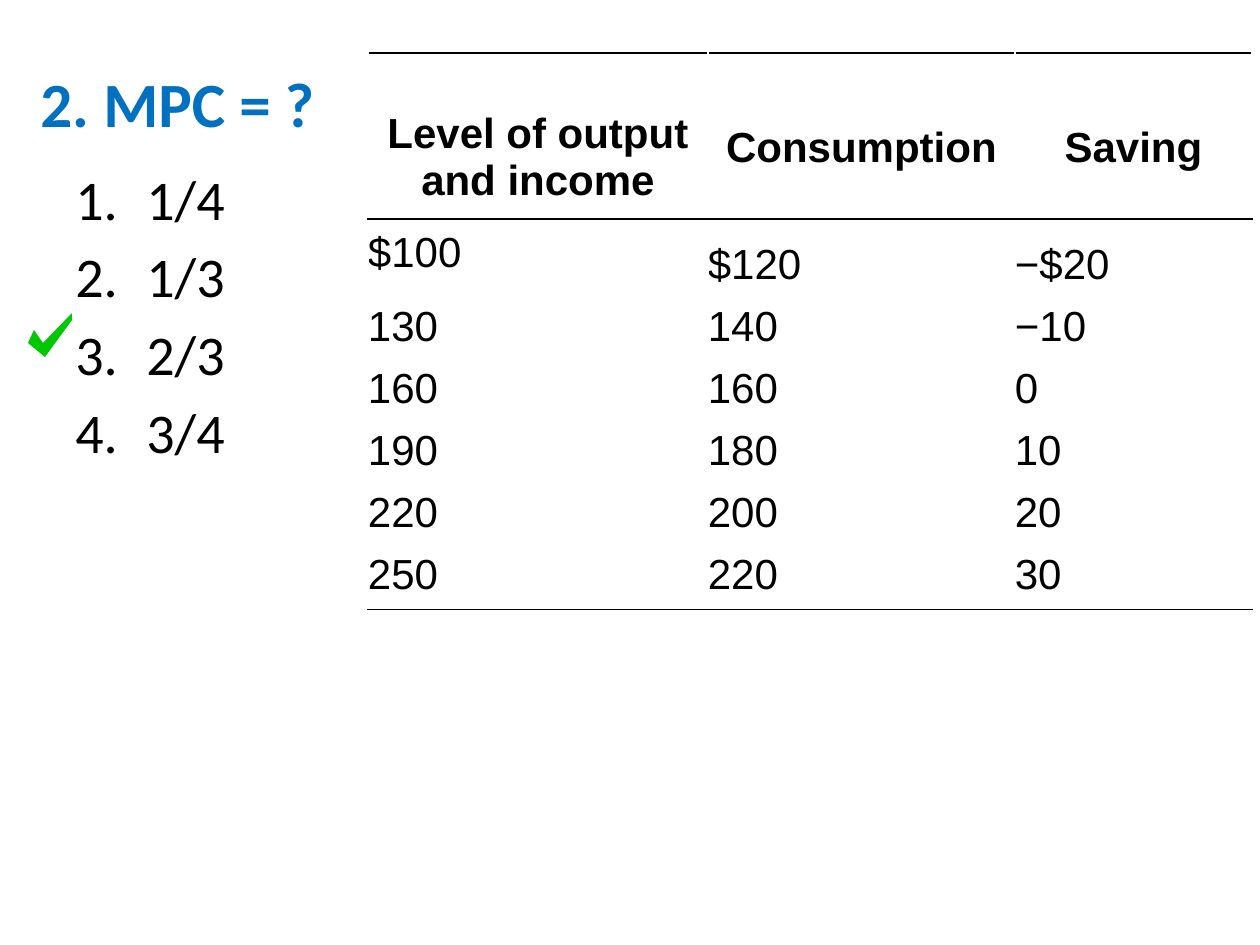
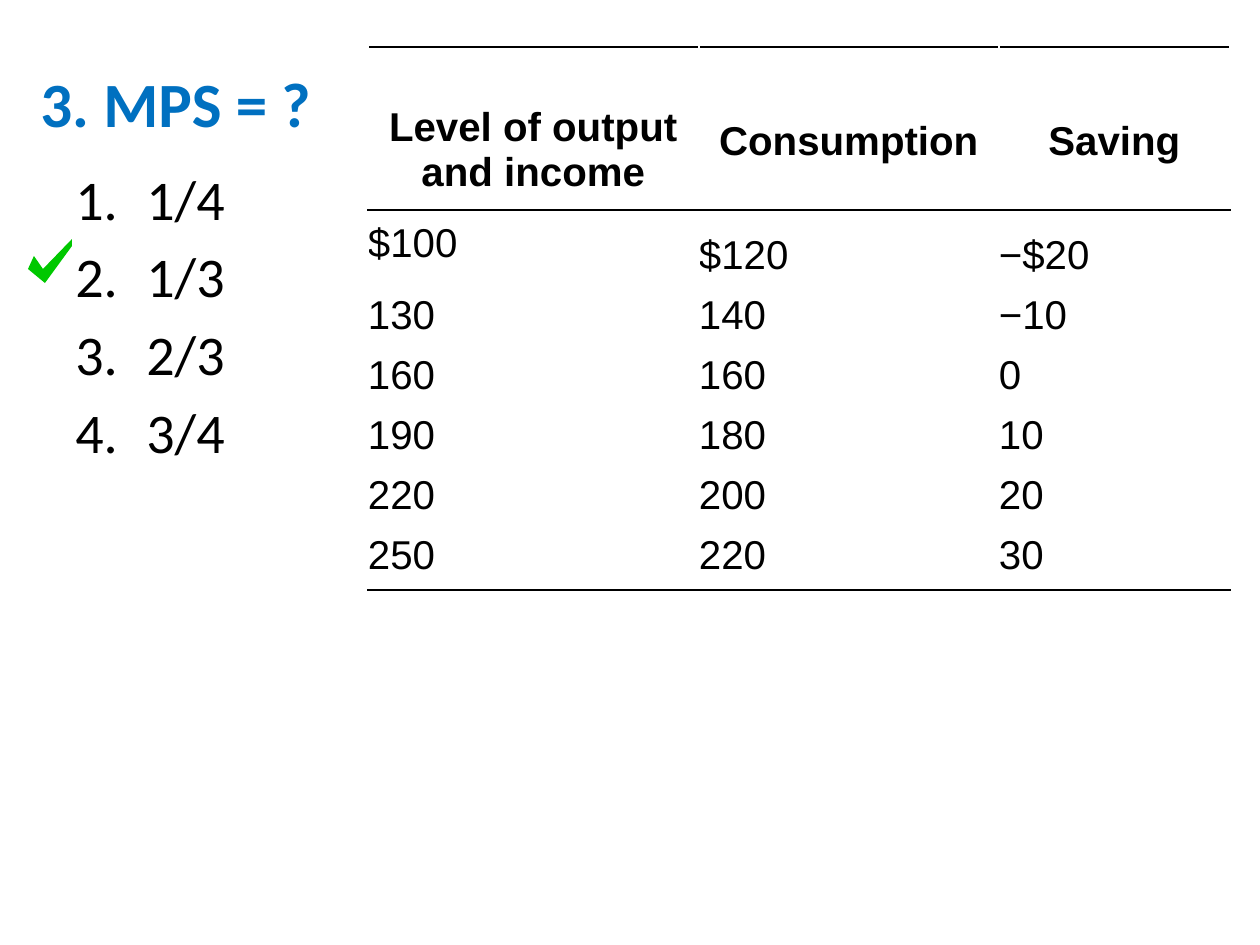
from dataclasses import dataclass

import pptx
import pptx.dml.color
import pptx.enum.text
import pptx.oxml
import pptx.oxml.ns
import pptx.util

EMU_PER_PX = 914400 / 126
COLORS = {"title": "0070C0", "text": "000000", "rule": "000000", "tick": "00C800"}
ALIGN = pptx.enum.text.PP_ALIGN
ANCHOR = pptx.enum.text.MSO_ANCHOR

# Text formats shared by both slides
TITLE = {"name": "Calibri", "size": pptx.util.Pt(36), "bold": True}
BODY = {"name": "Calibri", "size": pptx.util.Pt(32), "bold": False}

ANSWERS = ["1/4", "1/3", "2/3", "3/4"]
INCOME_ROWS = [
    ["Level of output and income", "Consumption", "Saving"],
    ["$100", "$120", "−$20"],
    ["130", "140", "−10"],
    ["160", "160", "0"],
    ["190", "180", "10"],
    ["220", "200", "20"],
    ["250", "220", "30"],
]
TICK_LEFT = 28
TICK_POINTS = [(6, 17), (0, 30), (17, 44), (44, 7), (44, 0), (15, 30)]


@dataclass
class Box:
    left: int
    top: int
    width: int
    height: int


@dataclass
class IncomeTable:
    left: int
    top: int
    cols: list[int]
    rows: list[int]
    size: int


@dataclass
class Question:
    title: str
    title_width: int
    tick_top: int
    table: IncomeTable


QUESTIONS = [
    Question("2. MPC = ?", 325, 313, IncomeTable(
        368, 53, [340, 307, 237], [166, 73, 62, 62, 62, 62, 69], 24)),
    Question("3. MPS = ?", 315, 239, IncomeTable(
        368, 47, [331, 300, 231], [163, 72, 60, 60, 60, 60, 68], 23)),
]


def px(n: int) -> pptx.util.Emu:
    return pptx.util.Emu(round(n * EMU_PER_PX))


def rgb(name: str) -> pptx.dml.color.RGBColor:
    return pptx.dml.color.RGBColor.from_string(COLORS[name])


def set_all(obj, values: dict) -> None:
    for name, value in values.items():
        setattr(obj, name, value)


def add_run(p, text: str, font: dict, color: str) -> None:
    r = p.add_run()
    r.text = text
    set_all(r.font, font)
    r.font.color.rgb = rgb(color)


def add_text_frame(s, box: Box, anchor):
    sp = s.shapes.add_textbox(px(box.left), px(box.top), px(box.width), px(box.height))
    tf = sp.text_frame
    set_all(tf, {"word_wrap": True, "vertical_anchor": anchor})
    return tf


def add_title(s, q: Question) -> None:
    tf = add_text_frame(s, Box(28, 42, q.title_width, 120), ANCHOR.MIDDLE)
    add_run(tf.paragraphs[0], q.title, TITLE, "title")


def add_answers(s) -> None:
    tf = add_text_frame(s, Box(63, 158, 179, 305), ANCHOR.TOP)
    for i, answer in enumerate(ANSWERS):
        p = tf.add_paragraph() if i else tf.paragraphs[0]
        p.space_after = pptx.util.Pt(6)
        add_run(p, answer, BODY, "text")
        # Hanging automatic number
        pPr = p._p.get_or_add_pPr()
        pPr.set("marL", str(px(71)))
        pPr.set("indent", str(-px(71)))
        pPr.append(pptx.oxml.parse_xml(
            f'<a:buAutoNum {pptx.oxml.ns.nsdecls("a")} type="arabicPeriod"/>'))


def add_tick(s, top: int) -> None:
    points = [(TICK_LEFT + x, top + y) for x, y in TICK_POINTS]
    fb = s.shapes.build_freeform(*points[0], scale=EMU_PER_PX)
    fb.add_line_segments(points[1:], close=True)
    sp = fb.convert_to_shape()
    sp.shadow.inherit = False
    sp.fill.solid()
    sp.fill.fore_color.rgb = rgb("tick")
    sp.line.fill.background()


def add_rules(cell, sides: list[str]) -> None:
    tcPr = cell._tc.get_or_add_tcPr()
    for i, side in enumerate(sides):
        tcPr.insert(i, pptx.oxml.parse_xml(
            f'<a:{side} {pptx.oxml.ns.nsdecls("a")} w="12700"><a:solidFill>'
            f'<a:srgbClr val="{COLORS["rule"]}"/></a:solidFill></a:{side}>'))


def top_margin(row: int, col: int) -> int:
    if row == 0:
        return 72 if col else 58
    return 23 if row == 1 and col else 11


def add_income_table(s, t: IncomeTable) -> None:
    last = len(INCOME_ROWS) - 1
    bottom_margins = {0: 4, last: 8}
    rules = {0: ["lnT", "lnB"], 1: ["lnT"], last: ["lnB"]}
    tbl = s.shapes.add_table(len(t.rows), len(t.cols), px(t.left), px(t.top),
                             px(sum(t.cols)), px(sum(t.rows))).table
    set_all(tbl, {"first_row": False, "horz_banding": False})
    for column, width in zip(tbl.columns, t.cols):
        column.width = px(width)
    for i, height in enumerate(t.rows):
        tbl.rows[i].height = px(height)
        for j, text in enumerate(INCOME_ROWS[i]):
            cell = tbl.cell(i, j)
            set_all(cell, {
                "margin_left": 0, "margin_right": 0,
                "margin_top": px(top_margin(i, j)),
                "margin_bottom": px(bottom_margins.get(i, 0)),
                "vertical_anchor": ANCHOR.TOP,
            })
            cell.fill.background()
            add_rules(cell, rules.get(i, []))
            p = cell.text_frame.paragraphs[0]
            p.alignment = ALIGN.LEFT if i else ALIGN.CENTER
            font = {"name": "Arial", "size": pptx.util.Pt(t.size), "bold": i == 0}
            add_run(p, text, font, "text")


def main() -> None:
    prs = pptx.Presentation()
    set_all(prs, {"slide_width": px(1260), "slide_height": px(945)})
    for q in QUESTIONS:
        s = prs.slides.add_slide(prs.slide_layouts[6])
        add_title(s, q)
        add_income_table(s, q.table)
        add_tick(s, q.tick_top)
        add_answers(s)
    prs.save("out.pptx")


if __name__ == "__main__":
    main()
